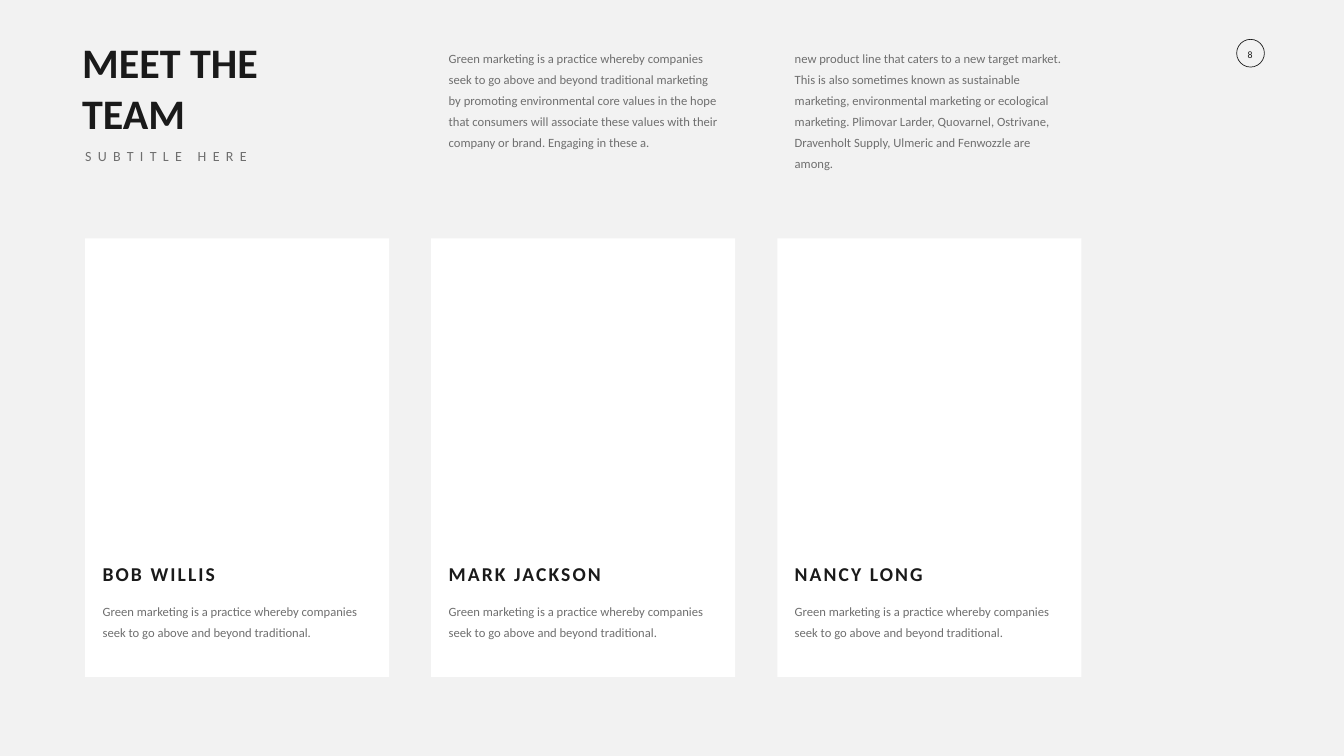
from pptx import Presentation
from pptx.dml.color import RGBColor
from pptx.enum.shapes import MSO_SHAPE
from pptx.enum.text import MSO_ANCHOR, MSO_AUTO_SIZE, PP_ALIGN
from pptx.util import Pt

BACKGROUND, WHITE, DARK, GREY = "F2F2F2", "FFFFFF", "1A1A1A", "6F6F6F"
FIRST_CARD_LEFT, CARD_PITCH = 121.7, 494.2
CARD_TOP, CARD_WIDTH, CARD_HEIGHT = 340.6, 434.2, 626.4
TEXT_INDENT, TEXT_WIDTH = 17.8, 399.6

INTRODUCTION = (
    "Green marketing is a practice whereby companies seek to go above and beyond "
    "traditional marketing by promoting environmental core values in the hope that "
    "consumers will associate these values with their company or brand. Engaging in these a.",
    "new product line that caters to a new target market. This is also sometimes known "
    "as sustainable marketing, environmental marketing or ecological marketing. "
    "Plimovar Larder, Quovarnel, Ostrivane, Dravenholt Supply, Ulmeric and Fenwozzle are among.",
)
BIOGRAPHY = ("Green marketing is a practice whereby companies "
             "seek to go above and beyond traditional.")
MEMBERS = (("BOB WILLIS", 197.3), ("MARK JACKSON", 266.4), ("NANCY LONG", 221))


def color(hex_string):
    return RGBColor.from_string(hex_string)


def write(frame, text, size=18, ink=GREY, bold=False, tracking=0, align=PP_ALIGN.LEFT,
          line_spacing=None, space_before=0):
    """Fill a text frame, one paragraph per line of text; tracking is in points."""
    for index, line in enumerate(text.split("\n")):
        paragraph = frame.add_paragraph() if index else frame.paragraphs[0]
        paragraph.alignment = align
        paragraph.space_before = Pt(space_before)
        if line_spacing:
            paragraph.line_spacing = Pt(line_spacing)
        run = paragraph.add_run()
        run.text = line
        run.font.name = "Calibri"
        run.font.size = Pt(size)
        run.font.bold = bold
        run.font.color.rgb = color(ink)
        if tracking:
            run._r.get_or_add_rPr().set("spc", str(tracking * 100))


class TeamSlide:
    """Holds the style and the current slide."""

    def __init__(self, presentation):
        self.slide = presentation.slides.add_slide(presentation.slide_layouts[6])
        self.slide.background.fill.solid()
        self.slide.background.fill.fore_color.rgb = color(BACKGROUND)

    def shape(self, kind, left, top, width, height, fill=None, line=None):
        shape = self.slide.shapes.add_shape(kind, Pt(left), Pt(top), Pt(width), Pt(height))
        shape.shadow.inherit = False
        if fill:
            shape.fill.solid()
            shape.fill.fore_color.rgb = color(fill)
        else:
            shape.fill.background()
        if line:
            shape.line.color.rgb = color(line)
            shape.line.width = Pt(1)
        else:
            shape.line.fill.background()
        return shape

    def text(self, text, left, top, width, height, wrap=False, anchor=MSO_ANCHOR.TOP, **style):
        box = self.slide.shapes.add_textbox(Pt(left), Pt(top), Pt(width), Pt(height))
        frame = box.text_frame
        frame.word_wrap = wrap
        frame.auto_size = MSO_AUTO_SIZE.SHAPE_TO_FIT_TEXT
        frame.vertical_anchor = anchor
        write(frame, text, **style)

    def body(self, text, left, top, height):
        self.text(text, left, top, TEXT_WIDTH, height, wrap=True,
                  line_spacing=30, space_before=24)

    def page_number(self, number):
        disc = self.shape(MSO_SHAPE.OVAL, 1771.2, 61.2, 28.8, 28.8)
        frame = disc.text_frame
        frame.margin_left = frame.margin_right = frame.margin_top = frame.margin_bottom = 0
        frame.word_wrap = False
        frame.vertical_anchor = MSO_ANCHOR.BOTTOM
        write(frame, number, size=14, ink=DARK, align=PP_ALIGN.CENTER)
        self.shape(MSO_SHAPE.OVAL, 1766.2, 56.2, 39.6, 39.6, line=DARK)

    def member_card(self, left, name, name_width):
        self.shape(MSO_SHAPE.RECTANGLE, left, CARD_TOP, CARD_WIDTH, CARD_HEIGHT, fill=WHITE)
        self.text(name, left + TEXT_INDENT, 799.2, name_width, 41, anchor=MSO_ANCHOR.MIDDLE,
                  size=28, ink=DARK, bold=True, tracking=3)
        self.body(BIOGRAPHY, left + TEXT_INDENT, 850.3, 95.8)


def main():
    presentation = Presentation()
    presentation.slide_width, presentation.slide_height = Pt(1919.5), Pt(1080)
    team = TeamSlide(presentation)
    team.page_number("8")
    team.text("MEET THE\nTEAM", 110.2, 49, 303.1, 152.6, size=60, ink=DARK, bold=True)
    team.text("SUBTITLE HERE", 114.5, 206.6, 280.1, 31.7, size=20, tracking=9, space_before=4)
    lefts = [FIRST_CARD_LEFT + column * CARD_PITCH for column in range(len(MEMBERS))]
    for left, (name, name_width) in zip(lefts, MEMBERS):
        team.member_card(left, name, name_width)
    for left, text in zip(lefts[1:], INTRODUCTION):
        team.body(text, left + TEXT_INDENT, 60.5, 187.2)
    presentation.save("out.pptx")


if __name__ == "__main__":
    main()
